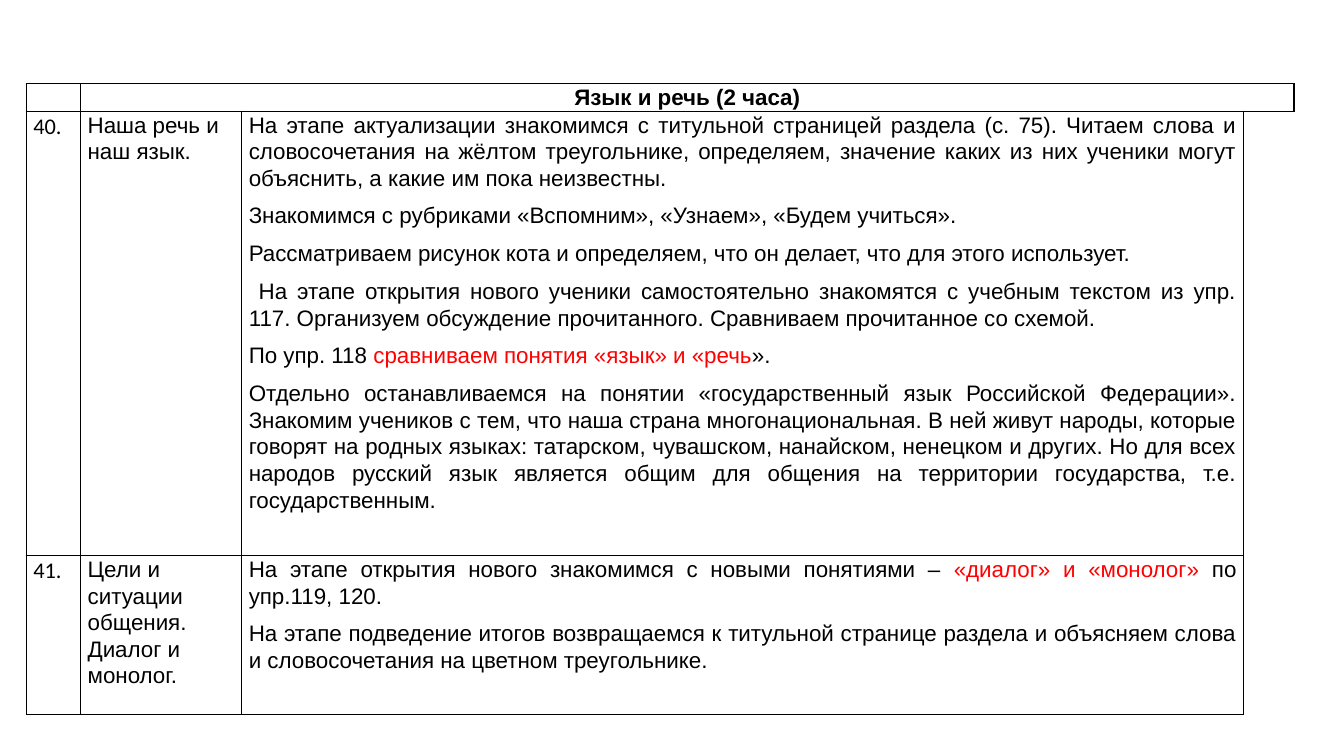
from lxml import etree
from pptx import Presentation
from pptx.dml.color import RGBColor
from pptx.enum.text import PP_ALIGN
from pptx.oxml.ns import qn
from pptx.util import Cm, Pt

LEFT, CENTER, JUSTIFY = PP_ALIGN.LEFT, PP_ALIGN.CENTER, PP_ALIGN.JUSTIFY
BLACK, RED = "000000", "FF0000"
COLUMN_WIDTHS = [1.37, 4.06, 25.25, 1.27]
ROW_HEIGHTS = [0.66, 11.2, 4.01]
SIDES = ["L", "R", "T", "B"]


def color(hex_string):
    return RGBColor.from_string(hex_string)


def write(cell, paragraphs, font="Arial", size=16, bold=False, align=LEFT):
    frame = cell.text_frame
    for index, runs in enumerate(paragraphs):
        paragraph = frame.add_paragraph() if index else frame.paragraphs[0]
        paragraph.alignment = align
        paragraph.line_spacing = 1.07
        paragraph.space_after = Pt(8)
        for text, hex_string in runs:
            run = paragraph.add_run()
            run.text = text
            run.font.name = font
            run.font.size = Pt(size)
            run.font.bold = bold
            run.font.color.rgb = color(hex_string)


presentation = Presentation()
presentation.slide_width = Cm(33.87)
presentation.slide_height = Cm(19.05)
slide = presentation.slides.add_slide(presentation.slide_layouts[6])

table = slide.shapes.add_table(
    len(ROW_HEIGHTS), len(COLUMN_WIDTHS), Cm(0.66), Cm(2.11),
    Cm(sum(COLUMN_WIDTHS)), Cm(sum(ROW_HEIGHTS))).table
table.first_row = False
table.horz_banding = False
for column, width in zip(table.columns, COLUMN_WIDTHS):
    column.width = Cm(width)
for row, height in zip(table.rows, ROW_HEIGHTS):
    row.height = Cm(height)

last_column = len(COLUMN_WIDTHS) - 1
for row_index, row in enumerate(table.rows):
    for column_index, cell in enumerate(row.cells):
        cell.margin_left = cell.margin_right = Cm(0.18)
        cell.margin_top = cell.margin_bottom = 0
        visible_sides = SIDES
        if column_index == last_column and row_index > 0:
            visible_sides = ["L", "T"] if row_index == 1 else ["L"]
        properties = cell._tc.get_or_add_tcPr()
        for side in SIDES:
            line = etree.SubElement(properties, qn(f"a:ln{side}"), w=str(Pt(1)))
            if side in visible_sides:
                fill = etree.SubElement(line, qn("a:solidFill"))
                etree.SubElement(fill, qn("a:srgbClr"), val=BLACK)
            else:
                etree.SubElement(line, qn("a:noFill"))
        cell.fill.background()

table.cell(0, 1).merge(table.cell(0, last_column))
corner_paragraph = table.cell(0, 0).text_frame.paragraphs[0]
etree.SubElement(corner_paragraph._p, qn("a:endParaRPr"), sz="1600")
write(table.cell(0, 1), [[("Язык и речь (2 часа)", BLACK)]], bold=True, align=CENTER)

lessons = [
    ("40.", "Наша речь и наш язык.", [
        [("На этапе актуализации знакомимся с титульной страницей раздела (с. 75). "
          "Читаем слова и словосочетания на жёлтом треугольнике, определяем, значение "
          "каких из них ученики могут объяснить, а какие им пока неизвестны.", BLACK)],
        [("Знакомимся с рубриками «Вспомним», «Узнаем», «Будем учиться».", BLACK)],
        [("Рассматриваем рисунок кота и определяем, что он делает, "
          "что для этого использует.", BLACK)],
        [(" На этапе открытия нового ученики самостоятельно знакомятся с учебным "
          "текстом из упр. 117. Организуем обсуждение прочитанного. "
          "Сравниваем прочитанное со схемой.", BLACK)],
        [("По упр. 118 ", BLACK), ("сравниваем понятия «язык» и «речь", RED),
         ("».", BLACK)],
        [("Отдельно останавливаемся на понятии «государственный язык Российской "
          "Федерации». Знакомим учеников с тем, что наша страна многонациональная. "
          "В ней живут народы, которые говорят на родных языках: татарском, чувашском, "
          "нанайском, ненецком и других. Но для всех народов русский язык является "
          "общим для общения на территории государства, т.е. государственным.", BLACK)],
    ]),
    ("41.", "Цели и ситуации общения. Диалог и монолог.", [
        [("На этапе открытия нового знакомимся с новыми понятиями – ", BLACK),
         ("«диалог» и «монолог» ", RED), ("по упр.119, 120.", BLACK)],
        [("На этапе подведение итогов возвращаемся к титульной странице раздела "
          "и объясняем слова и словосочетания на цветном треугольнике.", BLACK)],
    ]),
]
for row_index, (number, topic, content) in enumerate(lessons, start=1):
    write(table.cell(row_index, 0), [[(number, BLACK)]], font="Calibri")
    write(table.cell(row_index, 1), [[(topic, BLACK)]])
    write(table.cell(row_index, 2), content, align=JUSTIFY)

presentation.save("out.pptx")
